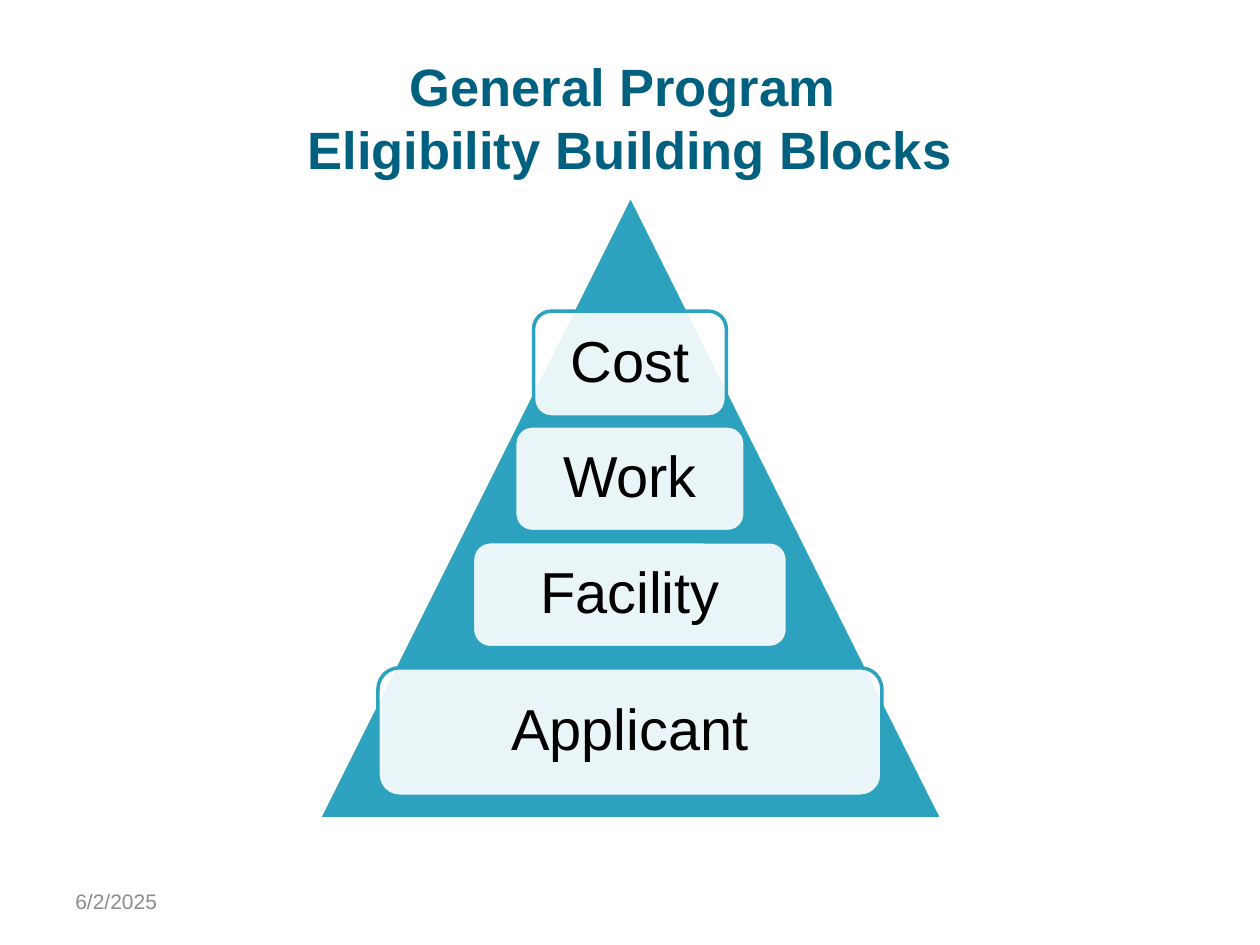
from pptx import Presentation
from pptx import util as u
from pptx.dml import color
from pptx.enum import shapes, text
from pptx.oxml import ns
from lxml import etree

COLORS = {
    "title": "00607F",
    "teal": "2DA2BF",
    "white": "FFFFFF",
    "black": "000000",
    "date": "8C8C8C",
}
FONT = "Arial"
CENTER_X = 5
BLOCKS = [
    ("Cost", 2.47, 1.53, 0.84),
    ("Work", 3.38, 1.83, 0.84),
    ("Facility", 4.3, 2.5, 0.84),
    ("Applicant", 5.3, 4, 1.02),
]


def rgb(name):
    return color.RGBColor.from_string(COLORS[name])


def write_text(shape, content, size, color_name, align, bold=False):
    frame = shape.text_frame
    frame.word_wrap = True
    frame.vertical_anchor = text.MSO_ANCHOR.MIDDLE
    frame.text = content
    paragraph = frame.paragraphs[0]
    paragraph.alignment = align
    for run in paragraph.runs:
        run.font.name = FONT
        run.font.size = u.Pt(size)
        run.font.bold = bold
        run.font.color.rgb = rgb(color_name)


def add_label(slide, box, content, size, color_name, align, bold=False):
    shape = slide.shapes.add_textbox(*map(u.Inches, box))
    write_text(shape, content, size, color_name, align, bold)


def add_filled_shape(slide, kind, box, fill, line):
    shape = slide.shapes.add_shape(kind, *map(u.Inches, box))
    shape.shadow.inherit = False
    shape.fill.solid()
    shape.fill.fore_color.rgb = rgb(fill)
    shape.line.color.rgb = rgb(line)
    shape.line.width = u.Pt(2)
    return shape


def set_opacity(shape, percent):
    fill_color = shape.element.spPr.find(ns.qn("a:solidFill"))[0]
    alpha = etree.SubElement(fill_color, ns.qn("a:alpha"))
    alpha.set("val", str(percent * 1000))


def add_block(slide, name, top, width, height):
    box = (CENTER_X - width / 2, top, width, height)
    shape = add_filled_shape(
        slide, shapes.MSO_SHAPE.ROUNDED_RECTANGLE, box, "white", "teal")
    set_opacity(shape, 90)
    write_text(shape, name, 33, "black", text.PP_ALIGN.CENTER)
    shape.text_frame.paragraphs[0].line_spacing = 0.9


def main():
    presentation = Presentation()
    presentation.slide_width = u.Inches(10)
    presentation.slide_height = u.Inches(7.5)
    slide = presentation.slides.add_slide(presentation.slide_layouts[6])
    add_label(slide, (0.5, 0.3, 9, 1.25),
              "General Program \vEligibility Building Blocks",
              30, "title", text.PP_ALIGN.CENTER, bold=True)
    add_filled_shape(slide, shapes.MSO_SHAPE.ISOSCELES_TRIANGLE,
                     (2.53, 1.55, 4.95, 4.95), "teal", "white")
    for block in BLOCKS:
        add_block(slide, *block)
    add_label(slide, (0.5, 6.95, 2.33, 0.4), "6/2/2025",
              12, "date", text.PP_ALIGN.LEFT)
    presentation.save("out.pptx")


if __name__ == "__main__":
    main()
